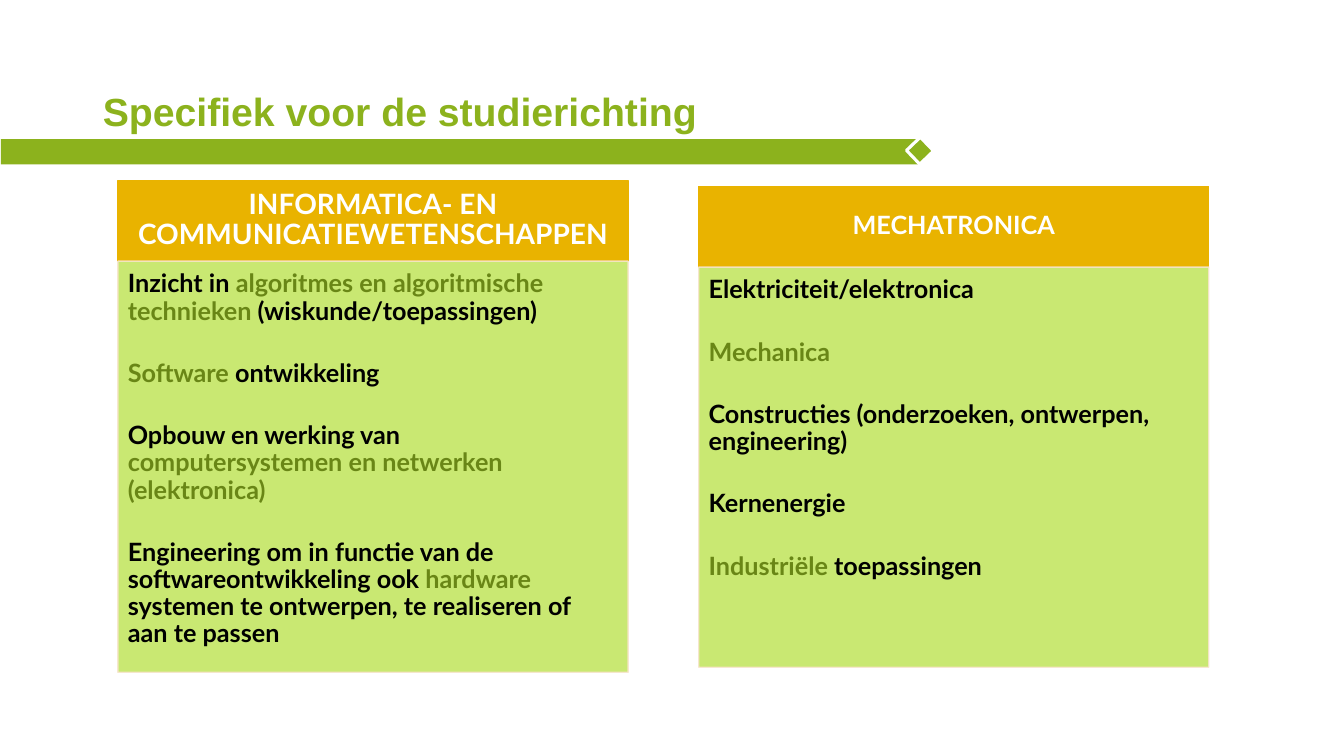
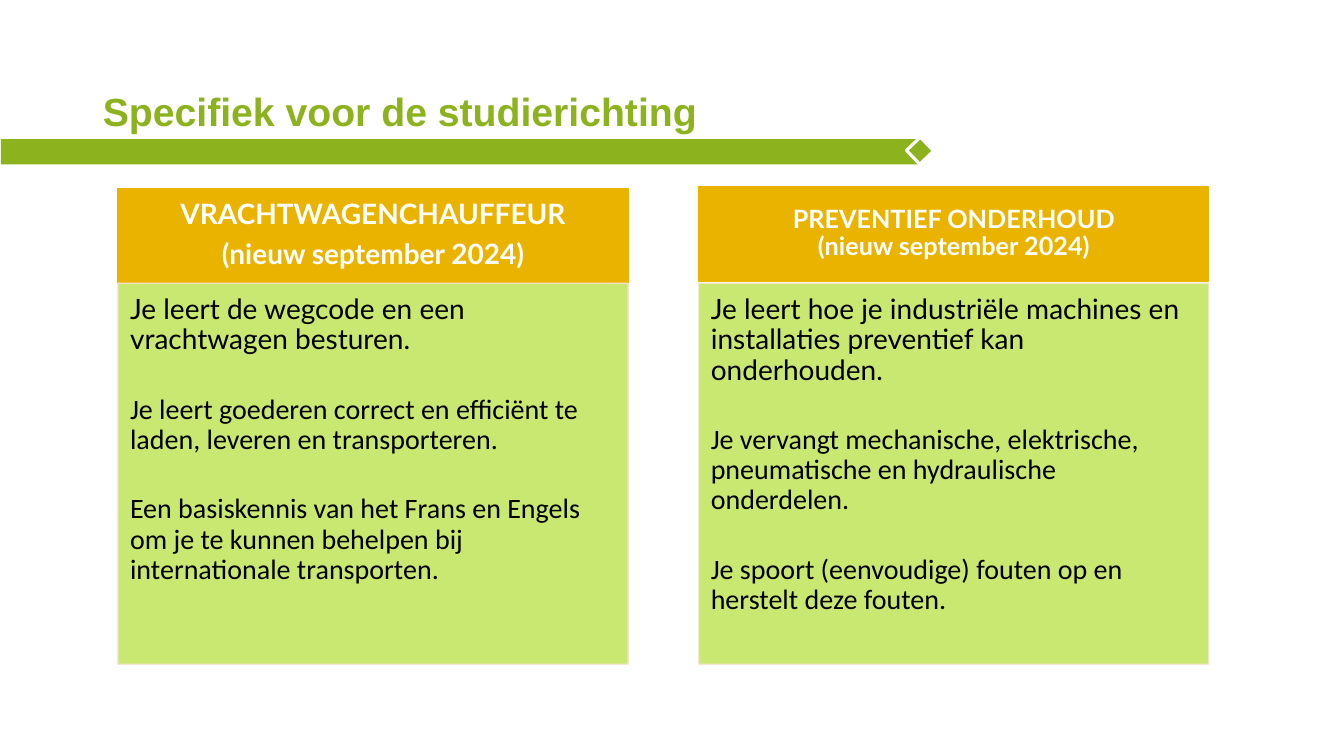
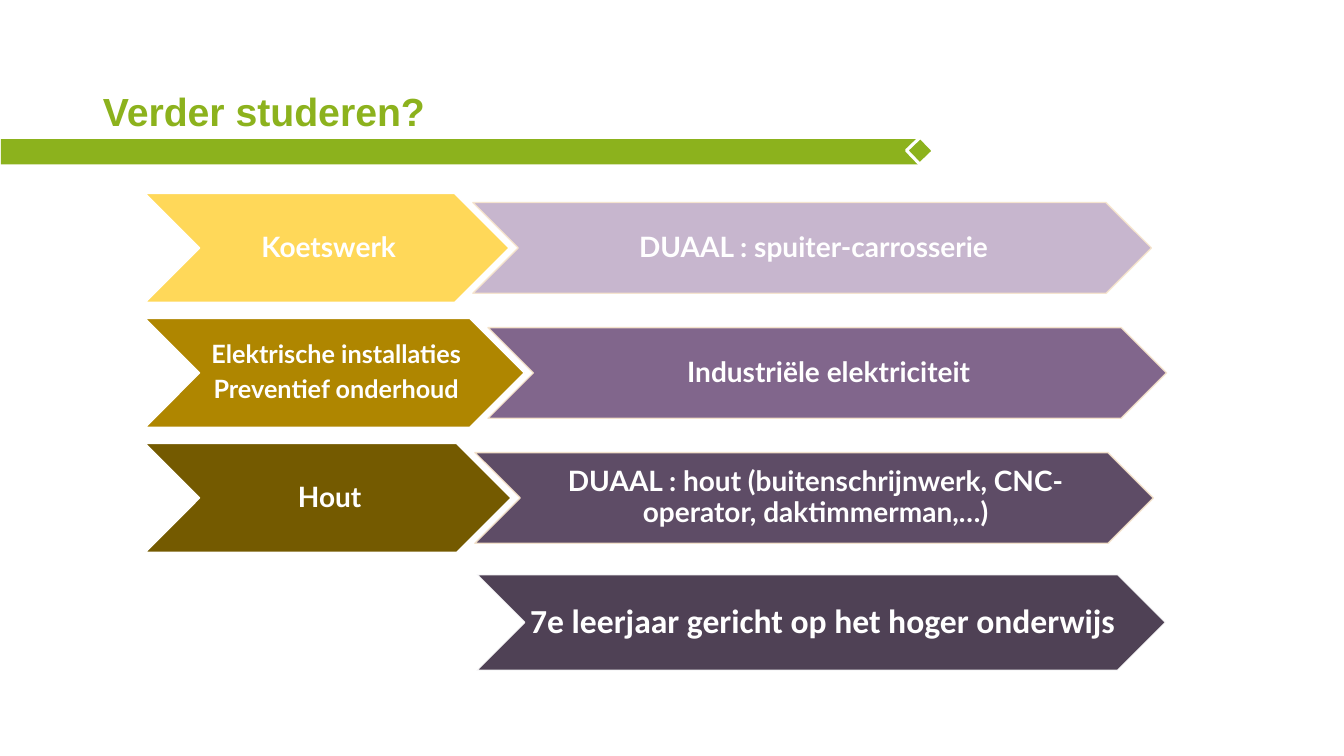
from lxml.etree import SubElement
from pptx import Presentation
from pptx.dml.color import RGBColor
from pptx.enum.shapes import MSO_SHAPE
from pptx.enum.text import MSO_ANCHOR, PP_ALIGN
from pptx.oxml.ns import qn
from pptx.util import Inches, Pt

COLORS = {
    "green": "8CB21D", "dark_green": "698616", "lime": "C4E663",
    "amber": "E9B300", "cream": "F7E5CC", "white": "FFFFFF", "black": "000000",
    "yellow": "FFD859", "ochre": "AF8600", "brown": "745A00",
    "lilac": "C1AFC9", "purple": "745680", "plum": "4D3956", "aubergine": "3C2D43",
}

# Two-column panels
COLUMN_LEFTS = (1.17, 6.93)
COLUMN_WIDTH = 5.06
# Left, top, right, bottom insets by text size
HEADING_INSETS = {18: (0.14, 0.08, 0.14, 0.08), 20: (0.16, 0.09, 0.16, 0.09)}
LIST_INSETS = {18: (0.1, 0.1, 0.14, 0.16), 20: (0.12, 0.12, 0.16, 0.17)}

# Rows of chevrons
CHEVRON_INSETS = (0.03, 0.01, 0, 0.01)
STAGE_LEFT, STAGE_TOP, STAGE_HEIGHT = 1.44, 1.92, 1.08
ROW_STEP = 1.24
OUTCOME_WIDTH, OUTCOME_HEIGHT = 6.73, 0.9
CHEVRON_OVERLAP = 0.36


def rgb(name):
    return RGBColor.from_string(COLORS[name])


def add_block(slide, kind, box, fill, line, line_width=1, opacity=100):
    block = slide.shapes.add_shape(kind, *(Inches(v) for v in box))
    block.shadow.inherit = False
    block.fill.solid()
    block.fill.fore_color.rgb = rgb(fill)
    if line:
        block.line.color.rgb = rgb(line)
        block.line.width = Pt(line_width)
    else:
        block.line.fill.background()
    if opacity < 100:
        for color in block.element.spPr.iter(qn("a:srgbClr")):
            SubElement(color, qn("a:alpha"), val=str(opacity * 1000))
    return block


def write(block, paragraphs, size, insets, color="white", bold=True, fonts=("Lato", "Lato"),
          align=PP_ALIGN.CENTER, anchor=MSO_ANCHOR.MIDDLE, gap=0.35):
    """Fill a block; *starred* words are highlighted, fonts are (first, other) paragraphs."""
    frame = block.text_frame
    frame.word_wrap = True
    frame.vertical_anchor = anchor
    (frame.margin_left, frame.margin_top,
     frame.margin_right, frame.margin_bottom) = (Inches(v) for v in insets)
    for number, text in enumerate(paragraphs):
        paragraph = frame.add_paragraph() if number else frame.paragraphs[0]
        paragraph.alignment = align
        paragraph.line_spacing = 0.9
        if number < len(paragraphs) - 1:
            paragraph.space_after = Pt(round(size * gap))
        plain, *parts = text.split("*")
        paragraph.text = plain
        highlights = []
        for index, part in enumerate(parts):
            if part:
                run = paragraph.add_run()
                run.text = part
                if index % 2 == 0:
                    highlights.append(run)
        for run in paragraph.runs:
            run.font.name = fonts[min(number, 1)]
            run.font.size = Pt(size)
            run.font.bold = bold
            run.font.color.rgb = rgb(color)
        for run in highlights:
            run.font.color.rgb = rgb("dark_green")


def add_panel(slide, column, heading, heading_size, heading_box, items, list_size, list_box, **style):
    """A heading bar over a list; each box is (top, height)."""
    left = COLUMN_LEFTS[column]
    bar = add_block(slide, MSO_SHAPE.RECTANGLE,
                    (left, heading_box[0], COLUMN_WIDTH, heading_box[1]), "amber", "amber")
    write(bar, heading, heading_size, HEADING_INSETS[heading_size])
    topics = add_block(slide, MSO_SHAPE.RECTANGLE,
                       (left, list_box[0], COLUMN_WIDTH, list_box[1]), "lime", "cream", opacity=90)
    write(topics, items, list_size, LIST_INSETS[list_size], color="black",
          align=PP_ALIGN.LEFT, anchor=MSO_ANCHOR.TOP, gap=1.4, **style)


def add_chevron(slide, box, fill, line, paragraphs, size=20, opacity=100, **style):
    chevron = add_block(slide, MSO_SHAPE.CHEVRON, box, fill, line, opacity=opacity)
    write(chevron, paragraphs, size, CHEVRON_INSETS, **style)


def add_titled_slide(deck, layout, title):
    slide = deck.slides.add_slide(layout)
    slide.shapes.title.text_frame.text = title
    paragraph = slide.shapes.title.text_frame.paragraphs[0]
    paragraph.alignment = PP_ALIGN.LEFT
    paragraph.line_spacing = 0.9
    font = paragraph.runs[0].font
    font.name, font.size, font.bold = "Arial", Pt(28), True
    font.color.rgb = rgb("green")
    return slide


def set_up_layout(layout):
    title = layout.placeholders[0]
    title.left, title.top, title.width, title.height = (Inches(v) for v in (0.92, 0.4, 11.5, 1.45))
    title.text_frame.vertical_anchor = MSO_ANCHOR.MIDDLE


def move_band_to_layout(slide, layout):
    """Draw the band and its diamond, then hand them to the shared layout."""
    band = add_block(slide, MSO_SHAPE.RECTANGLE, (0.01, 1.38, 9.11, 0.25), "green", None)
    diamond = add_block(slide, MSO_SHAPE.RECTANGLE, (9.03, 1.4, 0.19, 0.19), "green", "white", 2.25)
    diamond.rotation = 46.2
    for part in (band, diamond):
        layout.shapes.element.append(part.element)


def fill_science_slide(slide):
    add_panel(slide, 0, ["INFORMATICA- EN COMMUNICATIEWETENSCHAPPEN"], 20, (1.79, 0.8), [
        "Inzicht in *algoritmes en algoritmische technieken *(wiskunde/toepassingen)",
        "*Software* ontwikkeling",
        "Opbouw en werking van *computersystemen en netwerken (elektronica)*",
        "Engineering om in functie van de softwareontwikkeling ook *hardware* "
        "systemen te ontwerpen, te realiseren of aan te passen",
    ], 18, (2.59, 4.08))
    add_panel(slide, 1, ["MECHATRONICA"], 18, (1.85, 0.8), [
        "Elektriciteit/elektronica",
        "*Mechanica*",
        "Constructies (onderzoeken, ontwerpen, engineering)",
        "Kernenergie",
        "*Industriële* toepassingen",
    ], 18, (2.65, 3.97))


def fill_trade_slide(slide):
    style = {"bold": False, "fonts": ("Lato", "Calibri")}
    list_box = (2.81, 3.78)
    add_panel(slide, 0, ["VRACHTWAGENCHAUFFEUR", "(nieuw september 2024)"], 20, (1.87, 0.94), [
        "Je leert de wegcode en een vrachtwagen besturen.",
        "Je leert goederen correct en efficiënt te laden, leveren en transporteren.",
        "Een basiskennis van het Frans en Engels om je te kunnen behelpen bij "
        "internationale transporten.",
    ], 20, list_box, **style)
    add_panel(slide, 1, ["PREVENTIEF ONDERHOUD\v(nieuw september 2024)"], 18, (1.85, 0.94), [
        "Je leert hoe je industriële machines en installaties preventief kan onderhouden.",
        "Je vervangt mechanische, elektrische, pneumatische en hydraulische onderdelen.",
        "Je spoort (eenvoudige) fouten op en herstelt deze fouten.",
    ], 20, list_box, **style)


def fill_further_study_slide(slide):
    # Stage names, text size, width and fill; outcome and its fill
    rows = [
        (["Koetswerk"], 20, 3.61, "yellow", "DUAAL : spuiter-carrosserie", "lilac"),
        (["Elektrische installaties", "Preventief onderhoud"], 18, 3.76, "ochre",
         "Industriële elektriciteit", "purple"),
        (["Hout"], 20, 3.63, "brown",
         "DUAAL : hout (buitenschrijnwerk, CNC-operator, daktimmerman,…)", "plum"),
    ]
    for row, (stage, size, width, stage_fill, outcome, outcome_fill) in enumerate(rows):
        top = STAGE_TOP + row * ROW_STEP
        add_chevron(slide, (STAGE_LEFT, top, width, STAGE_HEIGHT), stage_fill, "white", stage, size)
        outcome_box = (STAGE_LEFT + width - CHEVRON_OVERLAP,
                       top + (STAGE_HEIGHT - OUTCOME_HEIGHT) / 2, OUTCOME_WIDTH, OUTCOME_HEIGHT)
        add_chevron(slide, outcome_box, outcome_fill, "cream", [outcome], opacity=90)
    # Seventh year
    add_chevron(slide, (4.73, 5.7, 6.83, 0.95), "aubergine", "white",
                ["7e leerjaar gericht op het hoger onderwijs"], 24, opacity=90,
                fonts=("Calibri", "Calibri"))


def main():
    deck = Presentation()
    deck.slide_width, deck.slide_height = Inches(13.33), Inches(7.5)
    layout = deck.slide_layouts.get_by_name("Title Only")
    set_up_layout(layout)
    contents = [
        ("Specifiek voor de studierichting", fill_science_slide),
        ("Specifiek voor de studierichting", fill_trade_slide),
        ("Verder studeren?", fill_further_study_slide),
    ]
    for title, fill_slide in contents:
        fill_slide(add_titled_slide(deck, layout, title))
    move_band_to_layout(deck.slides[0], layout)
    deck.save("out.pptx")


if __name__ == "__main__":
    main()
